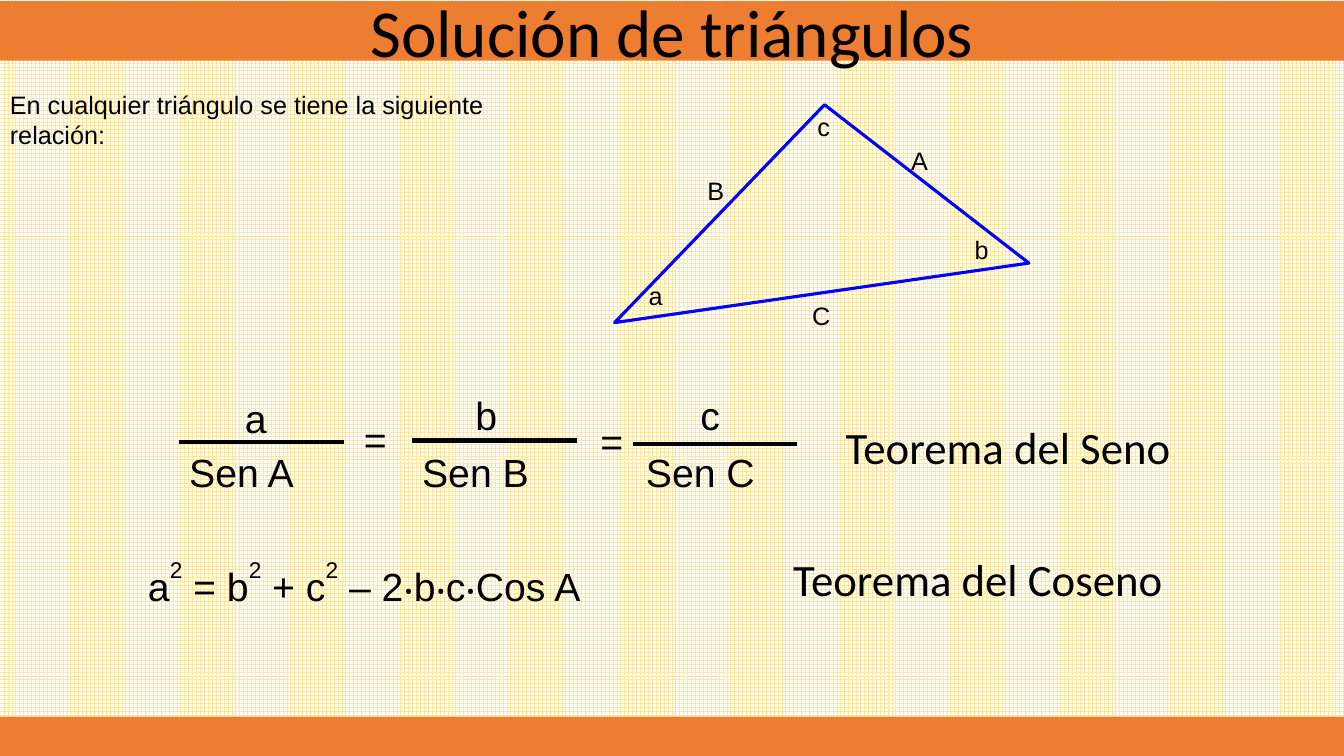
from dataclasses import dataclass
from itertools import groupby

from lxml import etree
from pptx import Presentation
from pptx.dml import color, fill
from pptx.enum import dml, shapes, text
from pptx.oxml import ns
from pptx.shapes.autoshape import Shape
from pptx.text.text import TextFrame
from pptx.util import Cm, Pt

BLACK, BLUE, ORANGE = "000000", "0000FF", "ED7D31"
YELLOW, PALE, WHITE = "FFFF00", "FFE699", "FFFFFF"
WIDE, HIGH = 33.87, 19.05
BAR = 4.14


@dataclass
class Label:
    text: str
    x: float
    y: float
    w: float = 1.04
    h: float = 1.02
    size: int = 18
    font: str = "Arial"


@dataclass
class Ratio:
    side: str
    angle: str
    x: float
    top_x: float
    top_y: float
    bar_x: float
    bar_y: float


LABELS = [
    Label("a", 16.1, 6.93),
    Label("b", 24.31, 5.79),
    Label("c", 20.35, 2.69),
    Label("A", 22.71, 3.53),
    Label("B", 17.58, 4.29),
    Label("C", 20.22, 7.44),
    Label("En cualquier triángulo se tiene la siguiente relación:",
          0, 2.13, 14.86, 1.8),
    Label("=", 8.92, 10.34, 1, 1.45, 28),
    Label("=", 14.88, 10.39, 1, 1.45, 28),
    Label("Teorema del Seno", 21.06, 10.44, 11.68, 1.63, 32, "Calibri"),
    Label("a² = b² + c² – 2‧b‧c‧Cos A", 3.48, 13.87, 15.16, 1.45, 28),
    Label("Teorema del Coseno", 19.74, 13.79, 13, 1.63, 32, "Calibri"),
]
RATIOS = [
    Ratio("a", "Sen A", 4.52, 5.92, 9.8, 4.52, 11.13),
    Ratio("b", "Sen B", 10.39, 11.73, 9.73, 10.39, 11.1),
    Ratio("c", "Sen C", 16.03, 17.4, 9.73, 15.95, 11.18),
]
CORNERS = [(15.49, 8.13), (20.78, 2.64), (25.93, 6.63)]


def rgb(code: str) -> color.RGBColor:
    return color.RGBColor.from_string(code)


def paint(area: fill.FillFormat, code: str) -> None:
    area.solid()
    area.fore_color.rgb = rgb(code)


def write(frame: TextFrame, words: str, *, size: int, font: str = "Arial",
          code: str = BLACK, align: text.PP_ALIGN = text.PP_ALIGN.LEFT) -> None:
    """Fill the frame with words, raising each ² as a superscript 2."""
    para = frame.paragraphs[0]
    para.alignment = align
    for high, chars in groupby(words, lambda char: char == "²"):
        run = para.add_run()
        run.text = "".join(chars).replace("²", "2")
        run.font.size, run.font.name = Pt(size), font
        run.font.color.rgb = rgb(code)
        if high:
            run.font._element.set("baseline", "60000")


def put(slide, item: Label) -> None:
    box = slide.shapes.add_textbox(Cm(item.x), Cm(item.y), Cm(item.w), Cm(item.h))
    box.text_frame.word_wrap = True
    write(box.text_frame, item.text, size=item.size, font=item.font)


def put_ratio(slide, part: Ratio) -> None:
    put(slide, Label(part.side, part.top_x, part.top_y, 1.35, 1.45, 28))
    put(slide, Label(part.angle, part.x, 11.18, BAR, 1.45, 28))
    y = Cm(part.bar_y)
    bar = slide.shapes.add_connector(
        shapes.MSO_CONNECTOR.STRAIGHT, Cm(part.bar_x), y, Cm(part.bar_x + BAR), y)
    bar.line.color.rgb, bar.line.width = rgb(BLACK), Pt(3)
    etree.SubElement(bar._element.spPr, ns.qn("a:effectLst"))


def put_triangle(slide) -> None:
    first, *rest = [(Cm(x), Cm(y)) for x, y in CORNERS]
    path = slide.shapes.build_freeform(*first)
    path.add_line_segments(rest, close=True)
    shape = path.convert_to_shape()
    shape.shadow.inherit = False
    shape.fill.background()
    shape.line.color.rgb, shape.line.width = rgb(BLUE), Pt(2.25)


def glow(title: Shape) -> None:
    """Give the title letters a thin outline and a soft shadow."""
    props = title.text_frame.paragraphs[0].runs[0].font._element
    line = etree.Element(ns.qn("a:ln"), w=str(Pt(0.75)))
    paint(fill.FillFormat.from_fill_parent(props), BLACK)
    solid = etree.SubElement(line, ns.qn("a:solidFill"))
    etree.SubElement(solid, ns.qn("a:srgbClr"), val=YELLOW)
    props.insert(0, line)
    effects = etree.Element(ns.qn("a:effectLst"))
    shadow = etree.SubElement(effects, ns.qn("a:outerShdw"), blurRad="38100",
                              dist="19050", dir="2700000")
    tint = etree.SubElement(shadow, ns.qn("a:srgbClr"), val=BLACK)
    etree.SubElement(tint, ns.qn("a:alpha"), val="40000")
    props.insert(2, effects)


def put_title(slide) -> None:
    title = slide.shapes.title
    title.left, title.top = Cm(0), Cm(0.03)
    title.width, title.height = Cm(WIDE), Cm(1.5)
    paint(title.fill, ORANGE)
    frame = title.text_frame
    frame.auto_size = text.MSO_AUTO_SIZE.NONE
    frame.vertical_anchor = text.MSO_ANCHOR.MIDDLE
    write(frame, "Solución de triángulos", size=48, font="Calibri",
          align=text.PP_ALIGN.CENTER)
    glow(title)


def put_footer(slide) -> None:
    band = slide.shapes.add_shape(
        shapes.MSO_SHAPE.RECTANGLE, Cm(0), Cm(18.06), Cm(WIDE), Cm(HIGH - 18.06))
    band.shadow.inherit = False
    paint(band.fill, ORANGE)
    band.line.fill.background()


def main() -> None:
    deck = Presentation()
    deck.slide_width, deck.slide_height = Cm(WIDE), Cm(HIGH)
    slide = deck.slides.add_slide(deck.slide_layouts.get_by_name("Title Only"))
    back = slide.background.fill
    back.patterned()
    back.pattern = dml.MSO_PATTERN.LARGE_GRID
    back.fore_color.rgb, back.back_color.rgb = rgb(PALE), rgb(WHITE)
    put_title(slide)
    put_triangle(slide)
    for item in LABELS:
        put(slide, item)
    for part in RATIOS:
        put_ratio(slide, part)
    put_footer(slide)
    deck.save("out.pptx")


if __name__ == "__main__":
    main()
